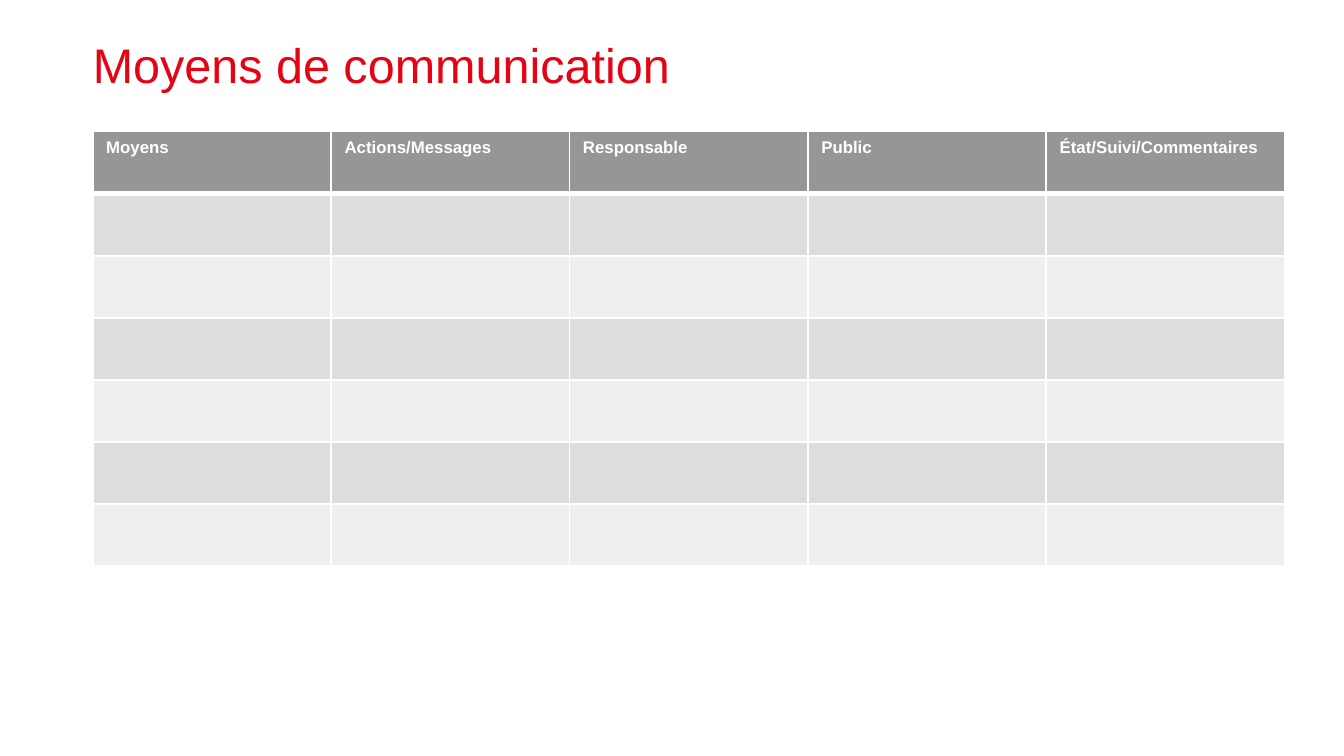
from dataclasses import dataclass

from lxml import etree
from pptx import Presentation
from pptx.dml.color import RGBColor
from pptx.enum.text import MSO_ANCHOR
from pptx.oxml.ns import qn
from pptx.util import Inches, Pt

MIDDLE = MSO_ANCHOR.MIDDLE
BLANK_LAYOUT = 6


@dataclass(frozen=True)
class Theme:
    font: str = "Arial"
    title_size: float = 26
    header_size: float = 9
    title_color: str = "E30513"
    white: str = "FFFFFF"
    header_fill: str = "969696"
    band_fills: tuple = ("DDDDDD", "EFEFEF")
    thin_border: float = 1
    thick_border: float = 3


class SlideBuilder:
    def __init__(self, slide, theme):
        self.slide = slide
        self.theme = theme

    def style_paragraph(self, paragraph, size, color, bold=False):
        font = paragraph.font
        font.name = self.theme.font
        font.size = Pt(size)
        font.bold = bold
        font.color.rgb = RGBColor.from_string(color)

    def add_title(self, text, left, top, width, height):
        shape = self.slide.shapes.add_textbox(
            Inches(left), Inches(top), Inches(width), Inches(height))
        frame = shape.text_frame
        frame.word_wrap = True
        frame.vertical_anchor = MIDDLE
        frame.margin_left = frame.margin_right = 0
        frame.margin_top = frame.margin_bottom = 0
        paragraph = frame.paragraphs[0]
        paragraph.text = text
        paragraph.line_spacing = 0.9
        self.style_paragraph(paragraph, self.theme.title_size, self.theme.title_color)

    def set_borders(self, cell, row):
        thin, thick = self.theme.thin_border, self.theme.thick_border
        widths = {
            "a:lnL": thin,
            "a:lnR": thin,
            "a:lnT": thick if row == 1 else thin,
            "a:lnB": thick if row == 0 else thin,
        }
        properties = cell._tc.get_or_add_tcPr()
        for position, (tag, width) in enumerate(widths.items()):
            line = etree.Element(qn(tag), w=str(Pt(width)))
            fill = etree.SubElement(line, qn("a:solidFill"))
            etree.SubElement(fill, qn("a:srgbClr"), val=self.theme.white)
            properties.insert(position, line)

    def add_table(self, headers, body_rows, left, top, width, height):
        row_count = body_rows + 1
        table = self.slide.shapes.add_table(
            row_count, len(headers),
            Inches(left), Inches(top), Inches(width), Inches(height)).table
        for row in range(row_count):
            color = self.theme.band_fills[(row - 1) % 2] if row else self.theme.header_fill
            for column, header in enumerate(headers):
                cell = table.cell(row, column)
                cell.fill.solid()
                cell.fill.fore_color.rgb = RGBColor.from_string(color)
                self.set_borders(cell, row)
                if row == 0:
                    cell.text = header
                    self.style_paragraph(
                        cell.text_frame.paragraphs[0],
                        self.theme.header_size, self.theme.white, bold=True)


def main():
    presentation = Presentation()
    presentation.slide_width = Inches(10)
    presentation.slide_height = presentation.slide_width * 9 // 16
    slide = presentation.slides.add_slide(presentation.slide_layouts[BLANK_LAYOUT])
    builder = SlideBuilder(slide, Theme())
    builder.add_title("Moyens de communication", 0.69, 0.3, 8.18, 0.41)
    headers = ["Moyens", "Actions/Messages", "Responsable", "Public",
               "État/Suivi/Commentaires"]
    builder.add_table(headers, 6, 0.69, 0.98, 8.87, 3.23)
    presentation.save("out.pptx")


if __name__ == "__main__":
    main()
